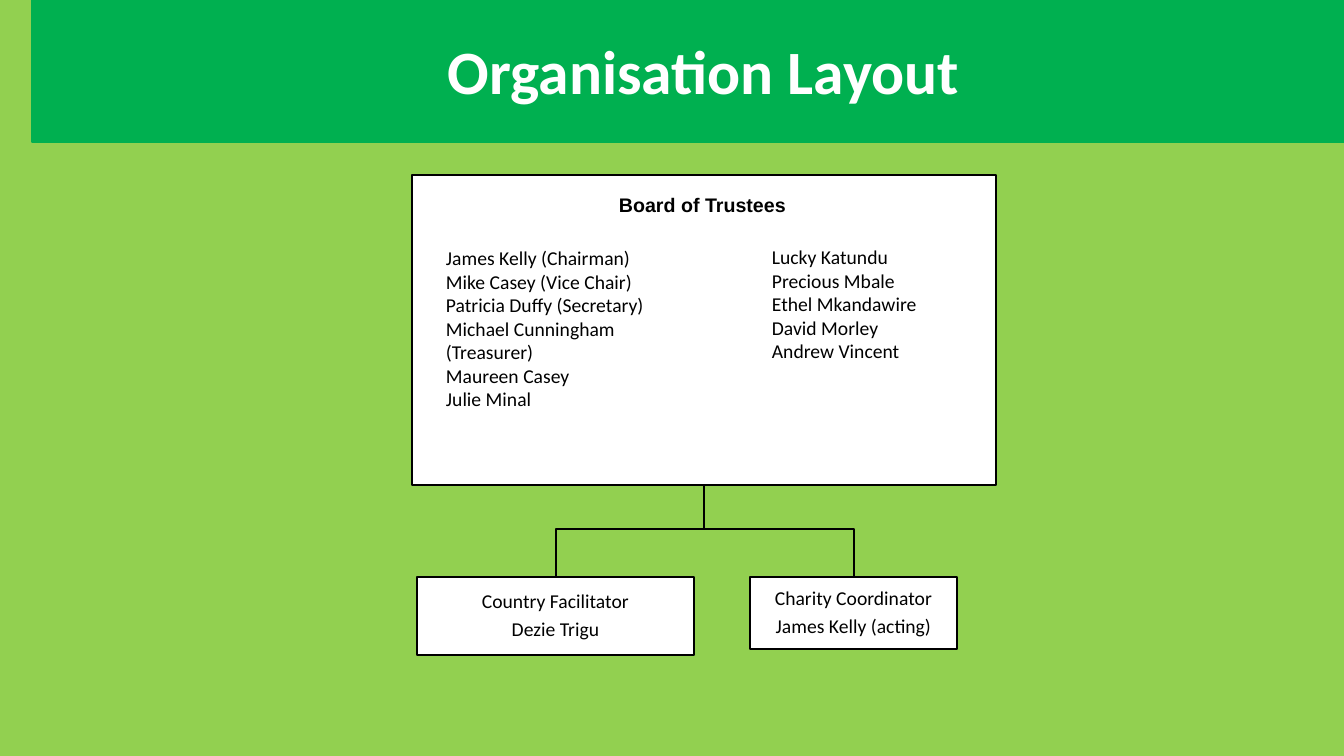
from pptx import Presentation
from pptx import util as u
from pptx.dml.color import RGBColor
from pptx.enum import shapes, text

PX = 12192000 / 1344  # EMU per px

LIME = RGBColor(0x92, 0xD0, 0x50)
GREEN = RGBColor(0x00, 0xB0, 0x50)
WHITE = RGBColor(0xFF, 0xFF, 0xFF)
BLACK = RGBColor(0x00, 0x00, 0x00)

TRUSTEES_LEFT = [
    "James Kelly (Chairman)",
    "Mike Casey (Vice Chair)",
    "Patricia Duffy (Secretary)",
    "Michael Cunningham (Treasurer)",
    "Maureen Casey",
    "Julie Minal",
]
TRUSTEES_RIGHT = [
    "Lucky Katundu",
    "Precious Mbale",
    "Ethel Mkandawire",
    "David Morley",
    "Andrew Vincent",
]


def px(*lengths):
    return [u.Emu(round(length * PX)) for length in lengths]


def write(shape, lines, size=14, font="Calibri", color=BLACK, bold=False,
          align=text.PP_ALIGN.LEFT, anchor=text.MSO_ANCHOR.TOP):
    frame = shape.text_frame
    frame.word_wrap = True
    frame.auto_size = text.MSO_AUTO_SIZE.NONE
    frame.vertical_anchor = anchor
    frame.margin_left = frame.margin_right = u.Inches(0.1)
    frame.margin_top = frame.margin_bottom = u.Inches(0.05)
    frame.text = "\n".join(lines)
    for paragraph in frame.paragraphs:
        paragraph.alignment = align
        for run in paragraph.runs:
            run.font.size = u.Pt(size)
            run.font.name = font
            run.font.bold = bold
            run.font.color.rgb = color
    return frame


def add_box(slide, box):
    panel = slide.shapes.add_shape(shapes.MSO_SHAPE.RECTANGLE, *px(*box))
    panel.shadow.inherit = False
    panel.fill.solid()
    panel.fill.fore_color.rgb = WHITE
    panel.line.color.rgb = BLACK
    panel.line.width = u.Pt(1)
    return panel


def add_banner(slide, box):
    banner = slide.shapes.title
    banner.left, banner.top, banner.width, banner.height = px(*box)
    banner.fill.solid()
    banner.fill.fore_color.rgb = GREEN
    banner.line.color.rgb = GREEN
    banner.line.width = u.Pt(1)
    write(banner, ["Organisation Layout"], size=44, color=WHITE, bold=True,
          align=text.PP_ALIGN.CENTER, anchor=text.MSO_ANCHOR.MIDDLE)


def add_board(slide, box):
    left, top, _, _ = box
    add_box(slide, box)
    heading = slide.shapes.add_textbox(*px(left + 197, top + 13, 191, 34))
    write(heading, ["Board of Trustees"], font="Arial", bold=True)
    for dx, dy, width, names in ((24, 66, 258, TRUSTEES_LEFT),
                                 (350, 65, 246, TRUSTEES_RIGHT)):
        column = slide.shapes.add_textbox(*px(left + dx, top + dy, width, 176))
        write(column, names)


def add_role(slide, box, lines):
    frame = write(add_box(slide, box), lines, align=text.PP_ALIGN.CENTER,
                  anchor=text.MSO_ANCHOR.MIDDLE)
    frame.margin_left = frame.margin_right = u.Inches(0.01)
    frame.margin_top = frame.margin_bottom = u.Inches(0.01)
    for paragraph in frame.paragraphs:
        paragraph.line_spacing = 0.9
        paragraph.space_after = u.Pt(5)


def add_branch(slide, parent, child):
    """Draw an elbow from the parent's bottom middle to the child's top middle."""
    start_x, start_y = parent[0] + parent[2] / 2, parent[1] + parent[3]
    end_x, end_y = child[0] + child[2] / 2, child[1]
    bend_y = start_y + 44
    builder = slide.shapes.build_freeform(start_x, start_y, scale=PX)
    builder.add_line_segments(
        [(start_x, bend_y), (end_x, bend_y), (end_x, end_y)], close=False)
    branch = builder.convert_to_shape()
    branch.shadow.inherit = False
    branch.fill.background()
    branch.line.color.rgb = BLACK
    branch.line.width = u.Pt(1)


def main():
    prs = Presentation()
    prs.slide_width, prs.slide_height = px(1344, 756)
    slide = prs.slides.add_slide(prs.slide_layouts[5])
    slide.background.fill.solid()
    slide.background.fill.fore_color.rgb = LIME

    # Title band
    add_banner(slide, (32, -2, 1344, 144))

    # Organisation chart: branches behind, then board and roles
    board = (412, 175, 584, 310)
    roles = (
        ((417, 577, 277, 78), ["Country Facilitator", "Dezie Trigu"]),
        ((750, 577, 207, 72), ["Charity Coordinator", "James Kelly (acting)"]),
    )
    for role, _ in roles:
        add_branch(slide, board, role)
    add_board(slide, board)
    for role, lines in roles:
        add_role(slide, role, lines)

    prs.save("out.pptx")


if __name__ == "__main__":
    main()
